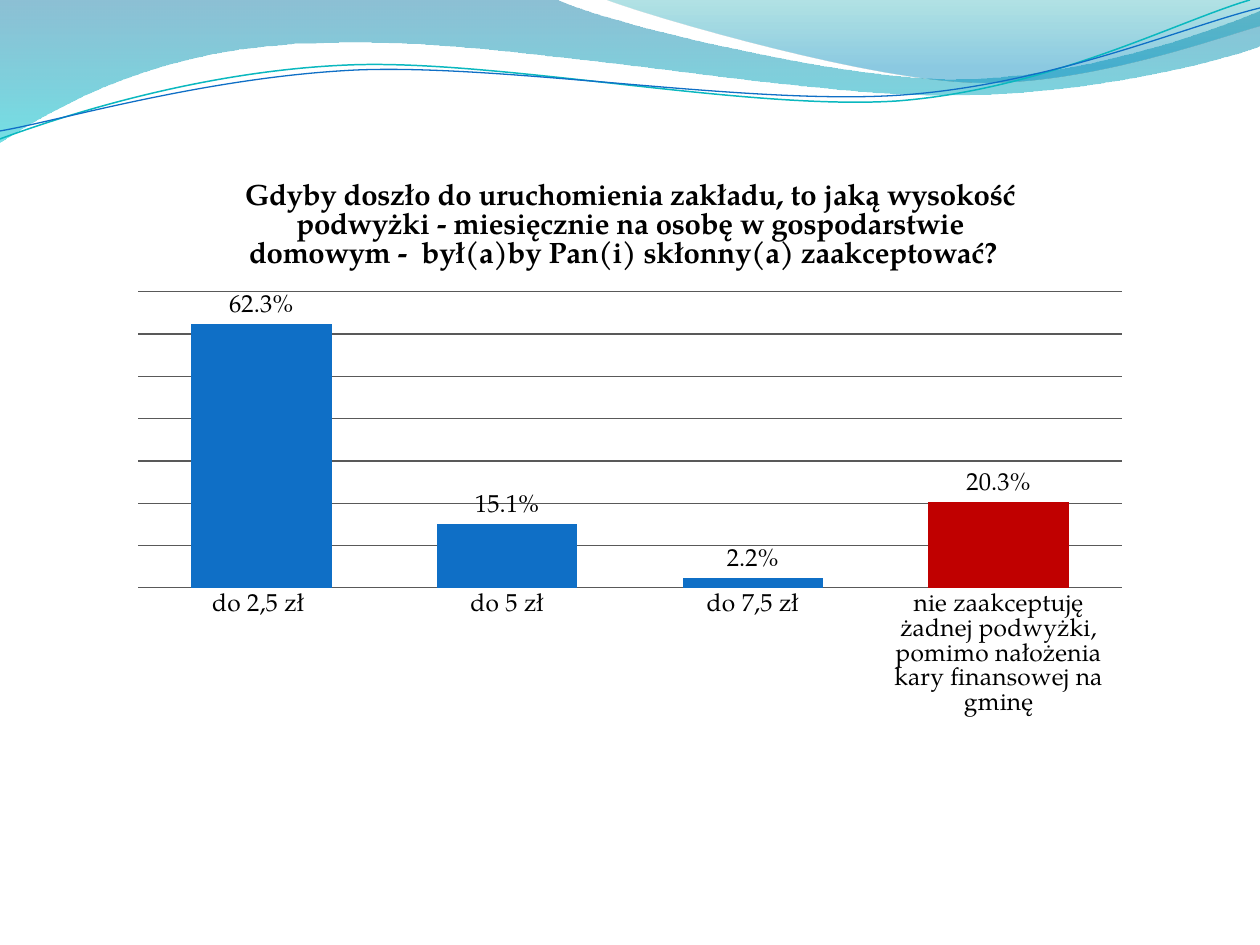
from lxml import etree
from pptx import Presentation
from pptx import util as u
from pptx.chart import data as chart_data
from pptx.dml.color import RGBColor
from pptx.enum import chart as ch
from pptx.oxml.ns import qn

PX = 7257.14  # EMU per px, 126 px to the inch
SLIDE = (1260, 945)
FONT = "TeX Gyre Pagella"
COLORS = {"text": "000000", "bar": "0F6FC6", "refusal": "C00000", "grid": "595959",
          "teal line": "0AB8BF", "blue line": "0F6FC6"}

# Outlines: a 2-tuple is a straight step, a 6-tuple a cubic curve (px)
WAVES = [
    # Main wave
    {"outline": [(0, 0), (557, 0), (600, 21, 837, 79, 955, 79),
                 (1074, 79, 1207, 33, 1260, 11), (1260, 46),
                 (1239, 55, 1096, 96, 940, 95), (784, 95, 481, 35, 324, 43),
                 (163, 45, 58, 105, 0, 142)],
     "stops": [(0, "0074A1", 45), (1, "00C6CF", 55)]},
    # Right wave
    {"outline": [(606, 0), (641, 14, 859, 78, 969, 82),
                 (1079, 87, 1211, 40, 1260, 26), (1260, 0)],
     "stops": [(0, "00A1A9", 30), (0.8, "008BBF", 45)]},
    # Thin curves
    {"outline": [(0, 139), (60, 117, 199, 71, 349, 65),
                 (498, 59, 747, 111, 898, 101), (1049, 89, 1178, 21, 1250, 0)],
     "line": ("teal line", 0.85)},
    {"outline": [(0, 131), (59, 121, 207, 77, 357, 70),
                 (508, 64, 752, 106, 903, 95), (1053, 84, 1186, 26, 1260, 8)],
     "line": ("blue line", 0.75)},
]

CHART_BOX = (118, 158, 1024, 571)
TITLE = ("Gdyby doszło do uruchomienia zakładu, to jaką wysokość podwyżki - "
         "miesięcznie na osobę w gospodarstwie domowym -  "
         "był(a)by Pan(i) skłonny(a) zaakceptować?  ")
ANSWERS = [
    ("do 2,5 zł ", 0.623, "bar"),
    ("do 5 zł", 0.151, "bar"),
    ("do 7,5 zł", 0.022, "bar"),
    ("nie zaakceptuję żadnej podwyżki, pomimo nałożenia kary finansowej na gminę",
     0.203, "refusal"),
]


def px(value):
    return u.Emu(round(value * PX))


def rgb(name):
    return RGBColor.from_string(COLORS[name])


def bend(shape, steps):
    """Turn the straight segments of cubic steps into real curves."""
    segments = list(shape._element.iter(qn("a:lnTo")))
    for segment, step in zip(segments, steps):
        if len(step) == 6:
            segment.tag = qn("a:cubicBezTo")
            for index in (0, 1):
                x, y = step[2 * index:2 * index + 2]
                control = etree.Element(qn("a:pt"), x=str(px(x) - shape.left),
                                        y=str(px(y) - shape.top))
                segment.insert(index, control)


def set_gradient(fill, stops):
    fill.gradient()
    fill.gradient_angle = 270  # top to bottom
    for stop, (position, color, _) in zip(fill.gradient_stops, stops):
        stop.position = position
        stop.color.rgb = RGBColor.from_string(color)
    color_elements = fill._xPr.iter(qn("a:srgbClr"))
    for element, (_, _, opacity) in zip(color_elements, stops):
        etree.SubElement(element, qn("a:alpha"), val=str(opacity * 1000))


def add_wave(slide, wave):
    start, *steps = wave["outline"]
    builder = slide.shapes.build_freeform(*map(px, start))
    builder.add_line_segments([tuple(map(px, step[-2:])) for step in steps],
                              close="stops" in wave)
    shape = builder.convert_to_shape()
    bend(shape, steps)
    shape.shadow.inherit = False
    if "stops" in wave:
        set_gradient(shape.fill, wave["stops"])
        shape.line.fill.background()
    else:
        color, width = wave["line"]
        shape.fill.background()
        shape.line.color.rgb = rgb(color)
        shape.line.width = u.Pt(width)


def set_font(font, size, bold=False):
    font.name, font.size, font.bold = FONT, u.Pt(size), bold
    font.color.rgb = rgb("text")


def add_answer_chart(slide):
    data = chart_data.CategoryChartData(number_format="0.0%")
    data.categories = [answer for answer, _, _ in ANSWERS]
    data.add_series("Series 1", [share for _, share, _ in ANSWERS])
    chart = slide.shapes.add_chart(ch.XL_CHART_TYPE.COLUMN_CLUSTERED,
                                   *map(px, CHART_BOX), data).chart
    set_font(chart.font, 14)
    chart.has_legend = False

    # Title
    chart.has_title = True
    run = chart.chart_title.text_frame.paragraphs[0].add_run()
    run.text = TITLE
    set_font(run.font, 16.8, bold=True)
    chart.chart_title.include_in_layout = False

    # Axes
    values = chart.value_axis
    values.has_major_gridlines = True
    values.visible = False
    values.tick_labels.number_format = "0.0%"
    values.tick_labels.number_format_is_linked = False
    categories = chart.category_axis
    categories.major_tick_mark = ch.XL_TICK_MARK.NONE
    for line in (values.major_gridlines.format.line, categories.format.line):
        line.color.rgb = rgb("grid")
        line.width = u.Pt(0.75)

    # Columns and their labels
    plot = chart.plots[0]
    plot.gap_width, plot.overlap, plot.vary_by_categories = 75, -25, False
    series = plot.series[0]
    series.format.fill.solid()
    series.format.fill.fore_color.rgb = rgb("bar")
    for index, (_, _, color) in enumerate(ANSWERS):
        if color != "bar":
            fill = series.points[index].format.fill
            fill.solid()
            fill.fore_color.rgb = rgb(color)
    labels = series.data_labels
    labels.show_value = True
    labels.number_format, labels.number_format_is_linked = "0.0%", False
    labels.position = ch.XL_LABEL_POSITION.OUTSIDE_END
    set_font(labels.font, 14)


def main():
    presentation = Presentation()
    presentation.slide_width, presentation.slide_height = map(px, SLIDE)
    slide = presentation.slides.add_slide(presentation.slide_layouts[6])
    for wave in WAVES:
        add_wave(slide, wave)
    add_answer_chart(slide)
    presentation.save("out.pptx")


if __name__ == "__main__":
    main()
